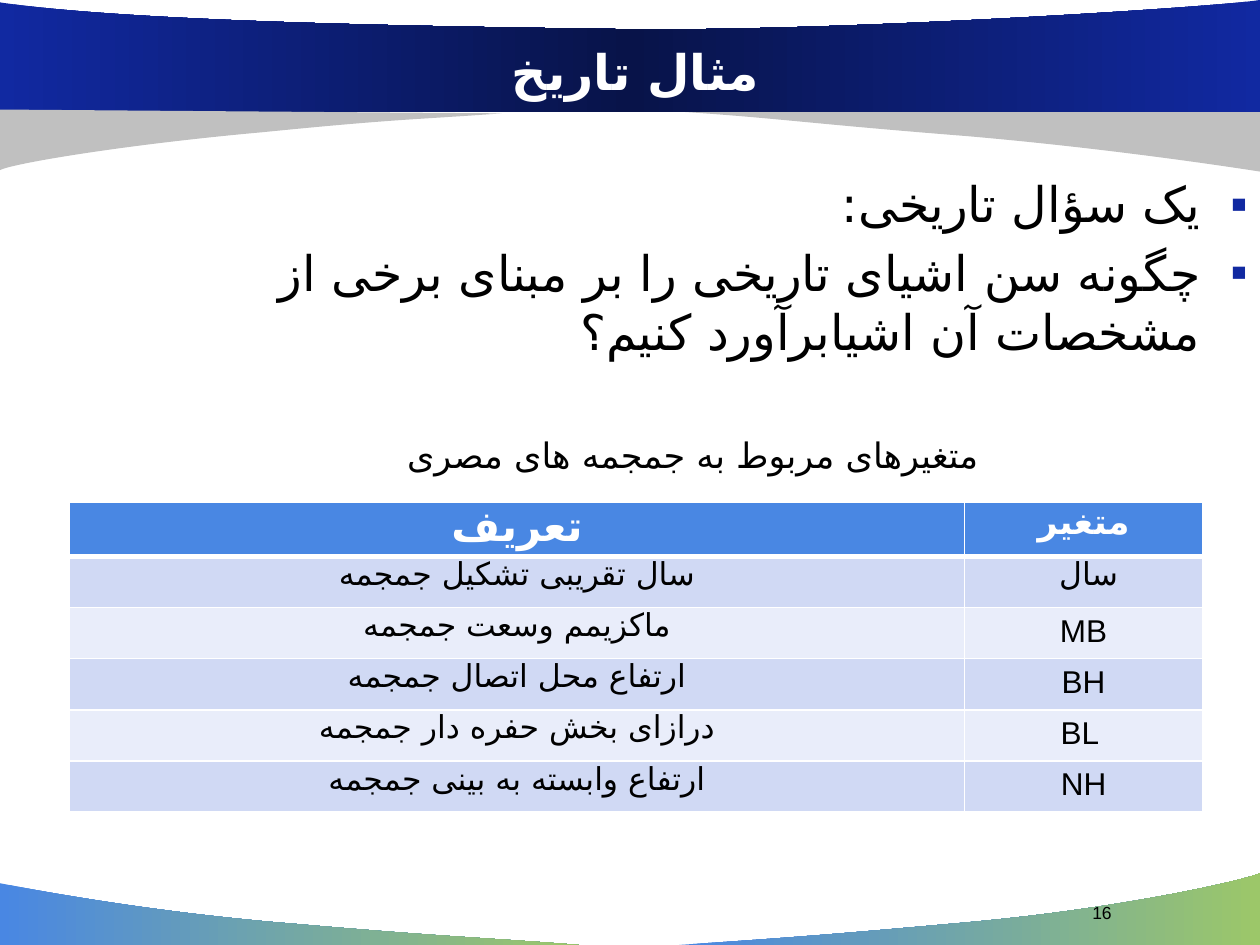
"""Build the slide that introduces the historical skull example."""
from copy import deepcopy

from lxml.etree import SubElement
from pptx import Presentation
from pptx.dml.color import RGBColor
from pptx.enum.shapes import MSO_SHAPE as Shape
from pptx.enum.text import MSO_ANCHOR as Anchor, MSO_AUTO_SIZE as AutoSize, PP_ALIGN as Align
from pptx.oxml.ns import qn
from pptx.util import Pt

WHITE = RGBColor(0xFF, 0xFF, 0xFF)
BLACK = RGBColor(0x00, 0x00, 0x00)
NAVY = RGBColor(0x11, 0x29, 0xA1)
DARK_NAVY = RGBColor(0x08, 0x13, 0x49)
BLUE = RGBColor(0x49, 0x87, 0xE3)
GREEN = RGBColor(0x9C, 0xC7, 0x69)
GREY = RGBColor(0xC0, 0xC0, 0xC0)
ROW_FILLS = [RGBColor(0xE9, 0xED, 0xFA), RGBColor(0xD0, 0xD9, 0xF4)]
PERSIAN_FONT = "DejaVu Sans"


def write(paragraph, text, size, align=Align.CENTER, color=BLACK, bold=False, name="Arial"):
    paragraph.alignment = align
    run = paragraph.add_run()
    run.text = text
    for attribute, value in {"size": Pt(size), "bold": bold, "name": name}.items():
        setattr(run.font, attribute, value)
    run.font.color.rgb = color
    SubElement(run.font._element, qn("a:cs"), typeface=PERSIAN_FONT)


presentation = Presentation()
presentation.slide_width, presentation.slide_height = Pt(720), Pt(540)
slide = presentation.slides.add_slide(presentation.slide_layouts[5])

bands = [
    ([BLUE, GREEN], (331, 540),
     [(276.5, 535.7, 257.8, 535.7, 167, 527.8), (76.3, 520.6, 0.7, 504.7, 0, 504.7), (0, 540)]),
    ([BLUE, GREEN], (388, 540),
     [(442, 536.4, 465, 535, 553.7, 527), (642.2, 519, 712.8, 502.6, 720, 499), (720, 540)]),
    ([GREY], (391.7, 64),
     [(446.4, 67.7, 462.2, 70.6, 553, 77.8), (643.7, 85.7, 719.3, 98, 720, 98), (720, 63.4)]),
    ([NAVY, DARK_NAVY, NAVY], (0, 64),
     [(720, 64), (720, 0), (694, 4.3, 470.2, 18.7, 350.6, 16.6),
      (231, 15, 72.7, 12.2, 0, 1.4)]),
    ([GREY], (286.6, 64.8),
     [(238.3, 68.4, 229, 67.7, 149.8, 75.6), (69.8, 82.8, 6.5, 93.6, 0, 97.2), (0, 62.6)]),
]
for colors, start, segments in bands:
    builder = slide.shapes.build_freeform(Pt(start[0]), Pt(start[1]))
    builder.add_line_segments([(Pt(s[-2]), Pt(s[-1])) for s in segments], close=True)
    band = builder.convert_to_shape()
    band.shadow.inherit = False
    band.line.fill.background()
    for line, segment in zip(list(band.element.iter(qn("a:lnTo"))), segments):
        if len(segment) == 2:
            continue
        curve = line.makeelement(qn("a:cubicBezTo"))
        line.getparent().replace(line, curve)
        for x, y in zip(segment[::2], segment[1::2]):
            SubElement(curve, qn("a:pt"), x=str(Pt(x) - band.left), y=str(Pt(y) - band.top))
    if len(colors) == 1:
        band.fill.solid()
        band.fill.fore_color.rgb = colors[0]
        continue
    band.fill.gradient()
    band.fill.gradient_angle = 0
    stop_list = band.element.spPr.find(qn("a:gradFill")).find(qn("a:gsLst"))
    for extra in range(len(colors) - 2):
        stop_list.append(deepcopy(stop_list[0]))
    for index, (stop, color) in enumerate(zip(band.fill.gradient_stops, colors)):
        stop.color.rgb = color
        stop.position = index / (len(colors) - 1)

title = slide.shapes.title
title.element.getparent().append(title.element)
for attribute, value in {"left": 54, "top": 18, "width": 618, "height": 44.6}.items():
    setattr(title, attribute, Pt(value))
frame_format = {"auto_size": AutoSize.NONE, "word_wrap": True, "vertical_anchor": Anchor.MIDDLE}
for attribute, value in frame_format.items():
    setattr(title.text_frame, attribute, value)
write(title.text_frame.paragraphs[0], "مثال تاریخ", 28, color=WHITE, bold=True)

page_number = slide.shapes.add_textbox(Pt(545.8), Pt(512), Pt(167.8), Pt(18))
page_number.text_frame.word_wrap = True
write(page_number.text_frame.paragraphs[0], "16", 10)

body = slide.shapes.add_textbox(Pt(72), Pt(95.8), Pt(648), Pt(408))
body.text_frame.word_wrap = True
questions = [
    "یک سؤال تاریخی:",
    "چگونه سن اشیای تاریخی را بر مبنای برخی از مشخصات آن اشیابرآورد کنیم؟",
]
for index, question in enumerate(questions):
    paragraph = body.text_frame.add_paragraph() if index else body.text_frame.paragraphs[0]
    write(paragraph, question, 28, Align.RIGHT, name="Times New Roman")
    paragraph.space_before = Pt(5.6)
    properties = paragraph._p.get_or_add_pPr()
    for attribute, value in {"rtl": 1, "marL": Pt(27), "indent": -Pt(27)}.items():
        properties.set(attribute, str(value))
    bullet_color = SubElement(properties, qn("a:buClr"))
    SubElement(bullet_color, qn("a:srgbClr"), val=str(NAVY))
    SubElement(properties, qn("a:buFont"), typeface="Arial")
    SubElement(properties, qn("a:buChar"), char="▪")
caption = body.text_frame.add_paragraph()
caption.space_before = Pt(42)
write(caption, "متغیرهای مربوط به جمجمه های مصری", 20, name="Times New Roman")

footer_panel = slide.shapes.add_shape(Shape.RECTANGLE, Pt(101.5), Pt(495.4), Pt(512), Pt(22.3))
footer_panel.shadow.inherit = False
footer_panel.fill.solid()
footer_panel.fill.fore_color.rgb = WHITE
footer_panel.line.color.rgb = WHITE
footer_panel.line.width = Pt(2)

rows = [
    ("تعریف", "متغیر"),
    ("سال تقریبی تشکیل جمجمه", " سال"),
    ("ماکزیمم وسعت جمجمه", "MB"),
    ("ارتفاع محل اتصال جمجمه", "BH"),
    ("درازای بخش حفره دار جمجمه", "BL "),
    ("ارتفاع وابسته به بینی جمجمه", "NH"),
]
table = slide.shapes.add_table(len(rows), 2, Pt(39.6), Pt(287), Pt(648), Pt(177)).table
for column, width in zip(table.columns, (511.6, 136)):
    column.width = Pt(width)
for row_index, texts in enumerate(rows):
    header = row_index == 0
    table.rows[row_index].height = Pt(31 if header else 29.2)
    for column_index, text in enumerate(texts):
        cell = table.cell(row_index, column_index)
        cell.margin_top = cell.margin_bottom = Pt(3.6 if text.isascii() else 0)
        size = (24, 20)[column_index] if header else 18
        write(cell.text_frame.paragraphs[0], text, size,
              color=WHITE if header else BLACK, bold=header)
        border_widths = {"L": 1, "R": 1, "T": 3 if row_index == 1 else 1, "B": 3 if header else 1}
        for side, width in border_widths.items():
            border = SubElement(cell._tc.get_or_add_tcPr(), qn(f"a:ln{side}"), w=str(Pt(width)))
            SubElement(SubElement(border, qn("a:solidFill")), qn("a:srgbClr"), val=str(WHITE))
        cell.fill.solid()
        cell.fill.fore_color.rgb = BLUE if header else ROW_FILLS[row_index % 2]

presentation.save("out.pptx")
